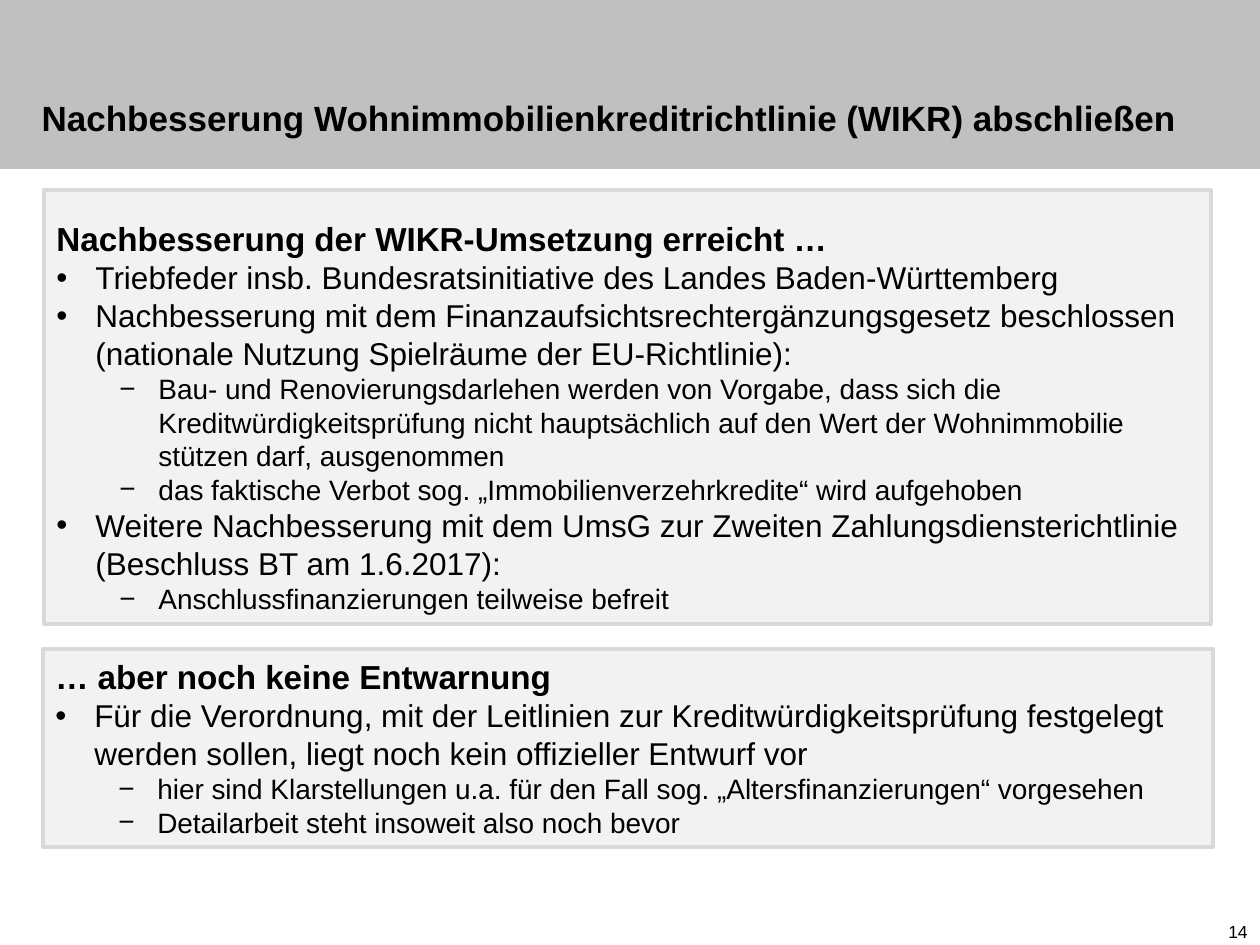
"""Build the slide on the mortgage credit directive."""
from typing import NamedTuple

from lxml import etree
from pptx import Presentation
from pptx.dml.color import RGBColor
from pptx.enum import shapes, text
from pptx.oxml import ns
from pptx.util import Inches, Pt

BLACK = RGBColor(0x00, 0x00, 0x00)
BAND = RGBColor(0xC0, 0xC0, 0xC0)
PANEL = RGBColor(0xF2, 0xF2, 0xF2)
EDGE = RGBColor(0xD9, 0xD9, 0xD9)
LEFT = text.PP_ALIGN.LEFT


class Style(NamedTuple):
    size: int
    bold: bool = False
    mark: str = ""
    indent: float = 0
    level: int = 0


class Line(NamedTuple):
    words: str
    style: Style
    space: float = 1.0


class Box(NamedTuple):
    left: float
    top: float
    width: float
    height: float


HEAD = Style(19, bold=True)
POINT = Style(18, mark="•", indent=0.31)
DASH = Style(16, mark="−", indent=0.81, level=1)

PANELS = [
    (Box(0.35, 1.51, 9.26, 3.44), [
        Line("Nachbesserung der WIKR-Umsetzung erreicht …", HEAD, 1.5),
        Line("Triebfeder insb. Bundesratsinitiative des Landes Baden-Württemberg", POINT),
        Line("Nachbesserung mit dem Finanzaufsichtsrechtergänzungsgesetz "
             "beschlossen (nationale Nutzung Spielräume der EU-Richtlinie):", POINT),
        Line("Bau- und Renovierungsdarlehen werden von Vorgabe, dass sich die "
             "Kreditwürdigkeitsprüfung nicht hauptsächlich auf den Wert der "
             "Wohnimmobilie stützen darf, ausgenommen", DASH),
        Line("das faktische Verbot sog. „Immobilienverzehrkredite“ wird aufgehoben", DASH),
        Line("Weitere Nachbesserung mit dem UmsG zur Zweiten "
             "Zahlungsdiensterichtlinie (Beschluss BT am 1.6.2017):", POINT),
        Line("Anschlussfinanzierungen teilweise befreit", DASH),
    ]),
    (Box(0.34, 5.15, 9.29, 1.57), [
        Line("… aber noch keine Entwarnung", HEAD),
        Line("Für die Verordnung, mit der Leitlinien zur Kreditwürdigkeitsprüfung "
             "festgelegt werden sollen, liegt noch kein offizieller Entwurf vor", POINT),
        Line("hier sind Klarstellungen u.a. für den Fall sog. "
             "„Altersfinanzierungen“ vorgesehen", DASH),
        Line("Detailarbeit steht insoweit also noch bevor", DASH),
    ]),
]


def write(para, words: str, *, size: int, bold: bool = False, mark: str = "",
          indent: float = 0, level: int = 0, space: float = 1.0, align=LEFT) -> None:
    """Fill a paragraph with formatted text."""
    para.alignment, para.line_spacing, para.level = align, space, level
    if mark:
        props = para._p.get_or_add_pPr()
        props.set("marL", str(Inches(indent)))
        props.set("indent", str(-Inches(0.31)))
        etree.SubElement(props, ns.qn("a:buFont"), typeface="Arial")
        etree.SubElement(props, ns.qn("a:buChar"), char=mark)
    run = para.add_run()
    run.text = words
    font = run.font
    font.name, font.size, font.bold = "Arial", Pt(size), bold
    font.color.rgb = BLACK


def draw_rect(slide, box: Box, fill: RGBColor):
    """Draw a flat rectangle without an outline."""
    rect = slide.shapes.add_shape(shapes.MSO_SHAPE.RECTANGLE, *map(Inches, box))
    rect.shadow.inherit = False
    rect.fill.solid()
    rect.fill.fore_color.rgb = fill
    rect.line.fill.background()
    return rect


def draw_panel(slide, box: Box, lines: list[Line]) -> None:
    """Draw a bordered panel with its list."""
    rect = draw_rect(slide, box, PANEL)
    rect.line.color.rgb = EDGE
    rect.line.width = Pt(2.25)
    frame = rect.text_frame
    frame.word_wrap = True
    frame.vertical_anchor = text.MSO_ANCHOR.MIDDLE
    for i, line in enumerate(lines):
        para = frame.add_paragraph() if i else frame.paragraphs[0]
        write(para, line.words, space=line.space, **line.style._asdict())


def draw_title(slide, words: str) -> None:
    """Place the title in front of the band."""
    title = slide.shapes.title
    slide.shapes._spTree.append(title._element)
    title.left, title.top, title.width, title.height = map(Inches, (0.33, 0.21, 9.47, 0.95))
    frame = title.text_frame
    frame.auto_size = text.MSO_AUTO_SIZE.NONE
    frame.vertical_anchor = text.MSO_ANCHOR.BOTTOM
    frame.margin_left = frame.margin_right = 0
    write(frame.paragraphs[0], words, size=20, bold=True, space=0.95)


def draw_number(slide, words: str) -> None:
    """Place the page number at the lower right."""
    frame = slide.shapes.add_textbox(*map(Inches, (7.92, 7.26, 2.08, 0.17))).text_frame
    frame.word_wrap = True
    write(frame.paragraphs[0], words, size=10, align=text.PP_ALIGN.RIGHT)


def main() -> None:
    """Build and save the slide."""
    deck = Presentation()
    deck.slide_width, deck.slide_height = Inches(10), Inches(7.5)
    slide = deck.slides.add_slide(deck.slide_layouts[5])
    draw_rect(slide, Box(0, 0, 10.03, 1.34), BAND)
    draw_title(slide, "Nachbesserung Wohnimmobilienkreditrichtlinie (WIKR) abschließen")
    draw_number(slide, "14")
    for box, lines in PANELS:
        draw_panel(slide, box, lines)
    deck.save("out.pptx")


if __name__ == "__main__":
    main()
